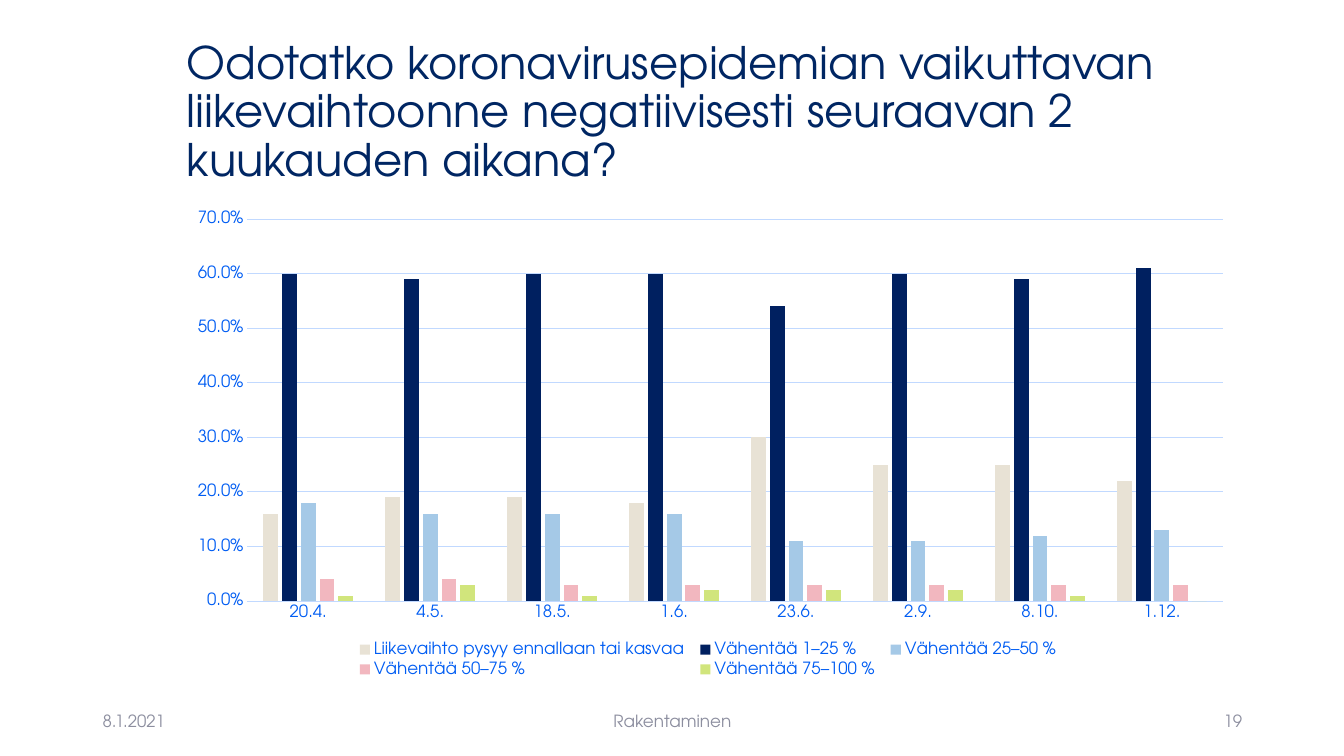
from pptx import Presentation
from pptx.chart.data import CategoryChartData
from pptx.dml.color import RGBColor
from pptx.enum.chart import XL_CHART_TYPE, XL_LEGEND_POSITION, XL_TICK_MARK
from pptx.enum.text import MSO_ANCHOR, MSO_AUTO_SIZE, PP_ALIGN
from pptx.util import Inches, Pt

FONT = "TeX Gyre Adventor"
NAVY, BLUE, PALE_BLUE, GREY = "002663", "005DF3", "C1D9FF", "8C8E9F"
PAGE_WIDTH, PAGE_HEIGHT = 13.33, 7.5
CONTENT_LEFT, CONTENT_WIDTH = 1.75, 10.59

DATES = ["20.4.", "4.5.", "18.5.", "1.6.", "23.6.", "2.9.", "8.10.", "1.12."]
ANSWERS = [
    ("Liikevaihto pysyy ennallaan tai kasvaa ", "E8E2D5",
     [0.16, 0.19, 0.19, 0.18, 0.3, 0.25, 0.25, 0.22]),
    ("Vähentää 1–25 %", "002060",
     [0.6, 0.59, 0.6, 0.6, 0.54, 0.6, 0.59, 0.61]),
    ("Vähentää 25–50 % ", "A5C9E7",
     [0.18, 0.16, 0.16, 0.16, 0.11, 0.11, 0.12, 0.13]),
    ("Vähentää 50–75 %", "F2B7BF",
     [0.04, 0.04, 0.03, 0.03, 0.03, 0.03, 0.03, 0.03]),
    ("Vähentää 75–100 % ", "D1E57C",
     [0.01, 0.03, 0.01, 0.02, 0.02, 0.02, 0.01, 0]),
]


def color(value):
    return RGBColor.from_string(value)


def style_font(font, size, value):
    font.name = FONT
    font.size = Pt(size)
    font.color.rgb = color(value)


def style_line(line, value):
    line.color.rgb = color(value)
    line.width = Pt(0.75)


def fill_text(shape, text, size, value, align):
    frame = shape.text_frame
    frame.word_wrap = True
    frame.auto_size = MSO_AUTO_SIZE.NONE
    frame.vertical_anchor = MSO_ANCHOR.MIDDLE
    para = frame.paragraphs[0]
    para.text = text
    para.alignment = align
    style_font(para.font, size, value)
    return para


def add_title(page, box, text):
    title = page.shapes.title
    title.left, title.top, title.width, title.height = map(Inches, box)
    para = fill_text(title, text, 32, NAVY, PP_ALIGN.LEFT)
    para.line_spacing = 0.9


def add_footer(page, box, date, topic, number):
    left, top, width, height = box
    side, middle = 3, 4.5
    parts = [
        (date, left, side, PP_ALIGN.LEFT),
        (topic, left + (width - middle) / 2, middle, PP_ALIGN.CENTER),
        (number, left + width - side, side, PP_ALIGN.RIGHT),
    ]
    for text, part_left, part_width, align in parts:
        part = page.shapes.add_textbox(
            *map(Inches, (part_left, top, part_width, height)))
        fill_text(part, text, 12, GREY, align)


def add_answer_chart(page, box):
    data = CategoryChartData(number_format="0.0%")
    data.categories = DATES
    for name, _, shares in ANSWERS:
        data.add_series(name, shares)
    chart = page.shapes.add_chart(
        XL_CHART_TYPE.COLUMN_CLUSTERED, *map(Inches, box), data).chart
    style_font(chart.font, 10, NAVY)
    chart.has_title = False

    plot = chart.plots[0]
    plot.gap_width = 219
    plot.overlap = -27
    plot.vary_by_categories = False
    for series, (_, fill, _) in zip(plot.series, ANSWERS):
        series.format.fill.solid()
        series.format.fill.fore_color.rgb = color(fill)

    for axis in (chart.category_axis, chart.value_axis):
        axis.major_tick_mark = XL_TICK_MARK.NONE
        axis.minor_tick_mark = XL_TICK_MARK.NONE
        style_font(axis.tick_labels.font, 12, BLUE)
    style_line(chart.category_axis.format.line, PALE_BLUE)

    values = chart.value_axis
    values.minimum_scale, values.maximum_scale, values.major_unit = 0, 0.7, 0.1
    values.tick_labels.number_format = "0.0%"
    values.tick_labels.number_format_is_linked = False
    values.format.line.fill.background()
    style_line(values.major_gridlines.format.line, PALE_BLUE)

    chart.has_legend = True
    chart.legend.position = XL_LEGEND_POSITION.BOTTOM
    chart.legend.include_in_layout = False
    style_font(chart.legend.font, 12, BLUE)


def main():
    deck = Presentation()
    deck.slide_width = Inches(PAGE_WIDTH)
    deck.slide_height = Inches(PAGE_HEIGHT)
    page = deck.slides.add_slide(deck.slide_layouts.get_by_name("Title Only"))
    add_title(page, (CONTENT_LEFT, 0.4, CONTENT_WIDTH, 1.45),
              "Odotatko koronavirusepidemian vaikuttavan liikevaihtoonne "
              "negatiivisesti seuraavan 2 kuukauden aikana?")
    add_answer_chart(page, (CONTENT_LEFT, 2, CONTENT_WIDTH, 4.76))
    add_footer(page, (0.92, 6.95, 11.5, 0.4), "8.1.2021", "Rakentaminen", "19")
    deck.save("out.pptx")


if __name__ == "__main__":
    main()
